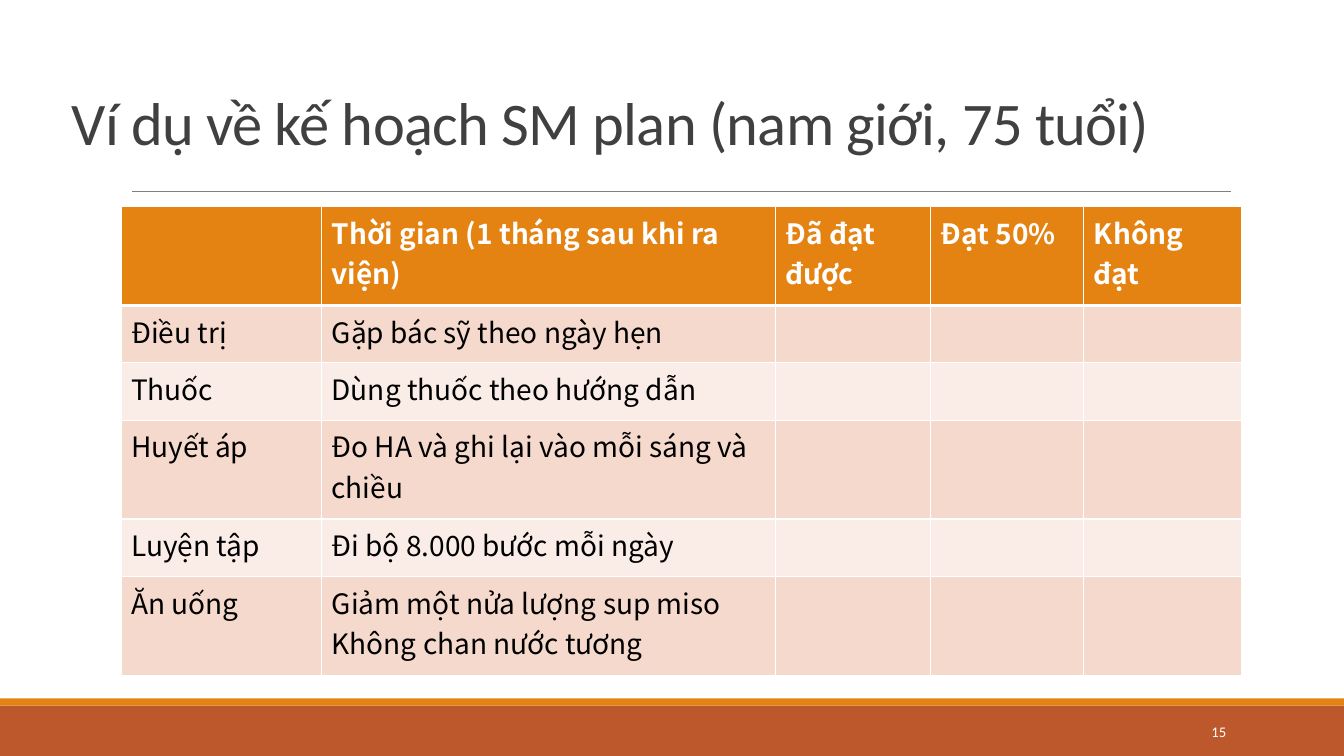
from lxml.etree import SubElement
from pptx import Presentation
from pptx.dml.color import RGBColor
from pptx.enum.shapes import MSO_CONNECTOR as Connector, MSO_SHAPE as Shape
from pptx.enum.text import MSO_ANCHOR as Anchor, MSO_AUTO_SIZE as AutoSize, PP_ALIGN as Align
from pptx.oxml.ns import qn
from pptx.util import Inches, Pt

COLORS = {
    "orange": "E48312", "rust": "BD582C", "rule": "808080", "title": "404040",
    "white": "FFFFFF", "black": "000000", "band_dark": "F5D9CC", "band_light": "FAEDE7",
}
TITLE = {"name": "Calibri", "size": Pt(43.2), "bold": False, "color": "title"}
HEADER = {"name": "Noto Sans CJK JP", "size": Pt(20), "bold": True, "color": "white"}
BODY = HEADER | {"bold": False, "color": "black"}
PAGE_NUMBER = {"name": "Calibri", "size": Pt(10.5), "color": "white"}

COLUMN_WIDTHS = [1.99, 4.5, 1.54, 1.52, 1.57]
ROW_HEIGHTS = [0.98, 0.57, 0.57, 0.98, 0.57, 0.98]
PLAN = [
    ["", "Thời gian (1 tháng sau khi ra viện)", "Đã đạt được", "Đạt 50%", "Không đạt"],
    ["Điều trị", "Gặp bác sỹ theo ngày hẹn"],
    ["Thuốc", "Dùng thuốc theo hướng dẫn"],
    ["Huyết áp", "Đo HA và ghi lại vào mỗi sáng và chiều"],
    ["Luyện tập", "Đi bộ 8.000 bước mỗi ngày"],
    ["Ăn uống", "Giảm một nửa lượng sup miso\nKhông chan nước tương"],
]


def rgb(color):
    """Return the named colour."""
    return RGBColor.from_string(COLORS[color])


def inches(values):
    """Convert numbers to lengths."""
    return [Inches(value) for value in values]


class PlanPage:
    """Draws styled elements on one page."""

    def __init__(self, deck):
        """Add a page with a title placeholder."""
        self.page = deck.slides.add_slide(deck.slide_layouts[5])
        self.shapes = self.page.shapes

    def fill_text(self, frame, text, style):
        """Fill a text frame with formatted paragraphs."""
        frame.text = text
        for para in frame.paragraphs:
            for span in para.runs:
                for name, value in style.items():
                    if name == "color":
                        span.font.color.rgb = rgb(value)
                    else:
                        setattr(span.font, name, value)

    def bar(self, place, color):
        """Draw a flat bar."""
        bar = self.shapes.add_shape(Shape.RECTANGLE, *inches(place))
        bar.shadow.inherit = False
        bar.fill.solid()
        bar.fill.fore_color.rgb = rgb(color)
        bar.line.fill.background()

    def rule(self, ends, color, width):
        """Draw a straight line."""
        rule = self.shapes.add_connector(Connector.STRAIGHT, *inches(ends))
        rule.line.color.rgb = rgb(color)
        rule.line.width = Pt(width)
        SubElement(rule._element.spPr, qn("a:effectLst"))

    def title(self, place, text):
        """Place and format the title."""
        box = self.shapes.title
        for name, value in zip(("left", "top", "width", "height"), inches(place)):
            setattr(box, name, value)
        frame = box.text_frame
        frame.auto_size = AutoSize.NONE
        frame.vertical_anchor = Anchor.BOTTOM
        self.fill_text(frame, text, TITLE)
        para = frame.paragraphs[0]
        para.alignment = Align.LEFT
        para.line_spacing = 0.85
        para.runs[0]._r.get_or_add_rPr().set("spc", "-50")

    def page_number(self, place, text):
        """Add the page number."""
        frame = self.shapes.add_textbox(*inches(place)).text_frame
        frame.word_wrap = True
        frame.vertical_anchor = Anchor.MIDDLE
        self.fill_text(frame, text, PAGE_NUMBER)
        frame.paragraphs[0].alignment = Align.RIGHT

    def borders(self, cell, widths):
        """Draw white cell borders of the given widths."""
        properties = cell._tc.get_or_add_tcPr()
        for side, width in widths.items():
            line = SubElement(properties, qn(f"a:ln{side}"), w=str(Pt(width)))
            fill = SubElement(line, qn("a:solidFill"))
            SubElement(fill, qn("a:srgbClr"), val=COLORS["white"])

    def table(self, place, rows):
        """Draw a table with a header and banded rows."""
        size = len(ROW_HEIGHTS), len(COLUMN_WIDTHS)
        table = self.shapes.add_table(*size, *inches(place)).table
        for column, width in zip(table.columns, COLUMN_WIDTHS):
            column.width = Inches(width)
        for index, (row, height) in enumerate(zip(table.rows, ROW_HEIGHTS)):
            row.height = Inches(height)
            style = BODY if index else HEADER
            band = "band_dark" if index % 2 else "band_light"
            widths = {"L": 1, "R": 1, "T": 3 if index == 1 else 1, "B": 1 if index else 3}
            for cell in row.cells:
                self.borders(cell, widths)
                cell.fill.solid()
                cell.fill.fore_color.rgb = rgb(band if index else "orange")
            for cell, text in zip(row.cells, rows[index]):
                self.fill_text(cell.text_frame, text, style)


def main():
    """Build and save the deck."""
    deck = Presentation()
    deck.slide_width, deck.slide_height = Inches(13.33), Inches(7.5)
    page = PlanPage(deck)
    page.bar((0, 7, 13.33, 0.5), "rust")
    page.bar((0, 6.93, 13.33, 0.07), "orange")
    page.rule((1.31, 1.9, 12.21, 1.9), "rule", 0.5)
    page.title((0.61, 0.31, 11.59, 1.31), "Ví dụ về kế hoạch SM plan (nam giới, 75 tuổi)")
    page.table((1.2, 2.05, sum(COLUMN_WIDTHS), sum(ROW_HEIGHTS)), PLAN)
    page.page_number((10.83, 7.06, 1.43, 0.4), "15")
    deck.save("out.pptx")


if __name__ == "__main__":
    main()
